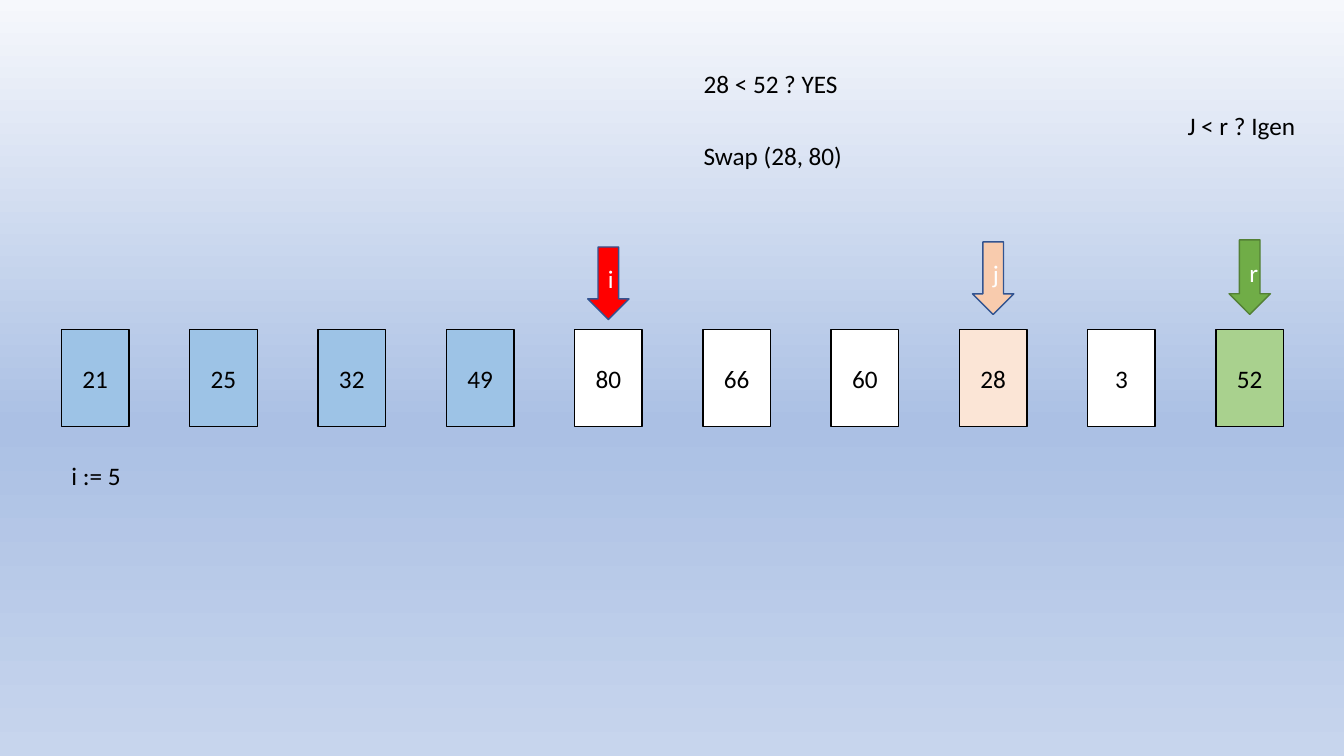
from copy import deepcopy

from pptx import Presentation
from pptx.dml.color import RGBColor
from pptx.enum.shapes import MSO_SHAPE
from pptx.enum.text import MSO_ANCHOR, MSO_AUTO_SIZE, PP_ALIGN
from pptx.oxml.ns import qn
from pptx.util import Inches, Pt

RECTANGLE, DOWN_ARROW = MSO_SHAPE.RECTANGLE, MSO_SHAPE.DOWN_ARROW
CENTER, LEFT = PP_ALIGN.CENTER, PP_ALIGN.LEFT
MIDDLE, TOP = MSO_ANCHOR.MIDDLE, MSO_ANCHOR.TOP
FIT_TEXT = MSO_AUTO_SIZE.SHAPE_TO_FIT_TEXT

BLACK = RGBColor(0x00, 0x00, 0x00)
WHITE = RGBColor(0xFF, 0xFF, 0xFF)
SMALLER_BLUE = RGBColor(0x9D, 0xC3, 0xE6)
CURRENT_PEACH = RGBColor(0xFB, 0xE5, 0xD6)
PIVOT_GREEN = RGBColor(0xA9, 0xD1, 0x8E)
I_RED = RGBColor(0xFF, 0x00, 0x00)
J_ORANGE = RGBColor(0xF8, 0xCB, 0xAD)
R_GREEN = RGBColor(0x70, 0xAD, 0x47)
R_OUTLINE = RGBColor(0x53, 0x80, 0x35)
BLUE_OUTLINE = RGBColor(0x32, 0x54, 0x91)
SKY = [
    (0, RGBColor(0xF6, 0xF8, 0xFC)),
    (0.56, RGBColor(0xAB, 0xC0, 0xE4)),
    (1, RGBColor(0xC7, 0xD5, 0xED)),
]


def write(shape, text, color=BLACK, align=LEFT, anchor=TOP):
    frame = shape.text_frame
    frame.word_wrap = True
    frame.vertical_anchor = anchor
    paragraph = frame.paragraphs[0]
    paragraph.alignment = align
    run = paragraph.add_run()
    run.text = text
    run.font.name = "Calibri"
    run.font.size = Pt(18)
    run.font.color.rgb = color


def add_labelled_shape(kind, left, top, width, height, text, fill, outline, color):
    shape = slide.shapes.add_shape(
        kind, Inches(left), Inches(top), Inches(width), Inches(height))
    shape.shadow.inherit = False
    shape.fill.solid()
    shape.fill.fore_color.rgb = fill
    shape.line.color.rgb = outline
    shape.line.width = Pt(1)
    write(shape, text, color=color, align=CENTER, anchor=MIDDLE)


prs = Presentation()
prs.slide_width, prs.slide_height = Inches(13.33), Inches(7.5)
slide = prs.slides.add_slide(prs.slide_layouts[6])

# Background: three-stop gradient running downwards
background = slide.background.fill
background.gradient()
background.gradient_angle = 270
stop_list = slide.element.find(".//" + qn("a:gsLst"))
stop_list.insert(1, deepcopy(stop_list[0]))
for stop, (position, color) in zip(background.gradient_stops, SKY):
    stop.position = position
    stop.color.rgb = color

# Array cells, evenly spaced
CELL_WIDTH, CELL_HEIGHT, CELL_TOP = 0.67, 0.96, 3.27
FIRST_LEFT, LAST_LEFT = 0.61, 12.06
values = [21, 25, 32, 49, 80, 66, 60, 28, 3, 52]
cell_fills = [SMALLER_BLUE] * 4 + [WHITE] * 3 + [CURRENT_PEACH, WHITE, PIVOT_GREEN]
pitch = (LAST_LEFT - FIRST_LEFT) / (len(values) - 1)
for index, (value, fill) in enumerate(zip(values, cell_fills)):
    add_labelled_shape(RECTANGLE, FIRST_LEFT + index * pitch, CELL_TOP,
                       CELL_WIDTH, CELL_HEIGHT, str(value), fill, BLACK, BLACK)

# Index arrows, centred above their cells
ARROW_WIDTH = 0.41
pointers = [
    ("r", 9, 2.38, 0.74, R_GREEN, R_OUTLINE),
    ("i", 4, 2.45, 0.72, I_RED, BLUE_OUTLINE),
    ("j", 7, 2.4, 0.72, J_ORANGE, BLUE_OUTLINE),
]
for name, index, top, height, fill, outline in pointers:
    left = FIRST_LEFT + index * pitch + (CELL_WIDTH - ARROW_WIDTH) / 2
    add_labelled_shape(DOWN_ARROW, left, top, ARROW_WIDTH, height,
                       name, fill, outline, WHITE)

# Step notes
notes = [
    ("Swap (28, 80)", 6.88, 1.34, 1.64),
    ("i := 5", 0.61, 4.52, 1.61),
    ("28 < 52 ? YES", 6.88, 0.63, 2.26),
    ("J < r ? Igen", 11.68, 1.05, 1.44),
]
for text, left, top, width in notes:
    note = slide.shapes.add_textbox(
        Inches(left), Inches(top), Inches(width), Inches(0.4))
    write(note, text)
    note.text_frame.auto_size = FIT_TEXT

prs.save("out.pptx")
